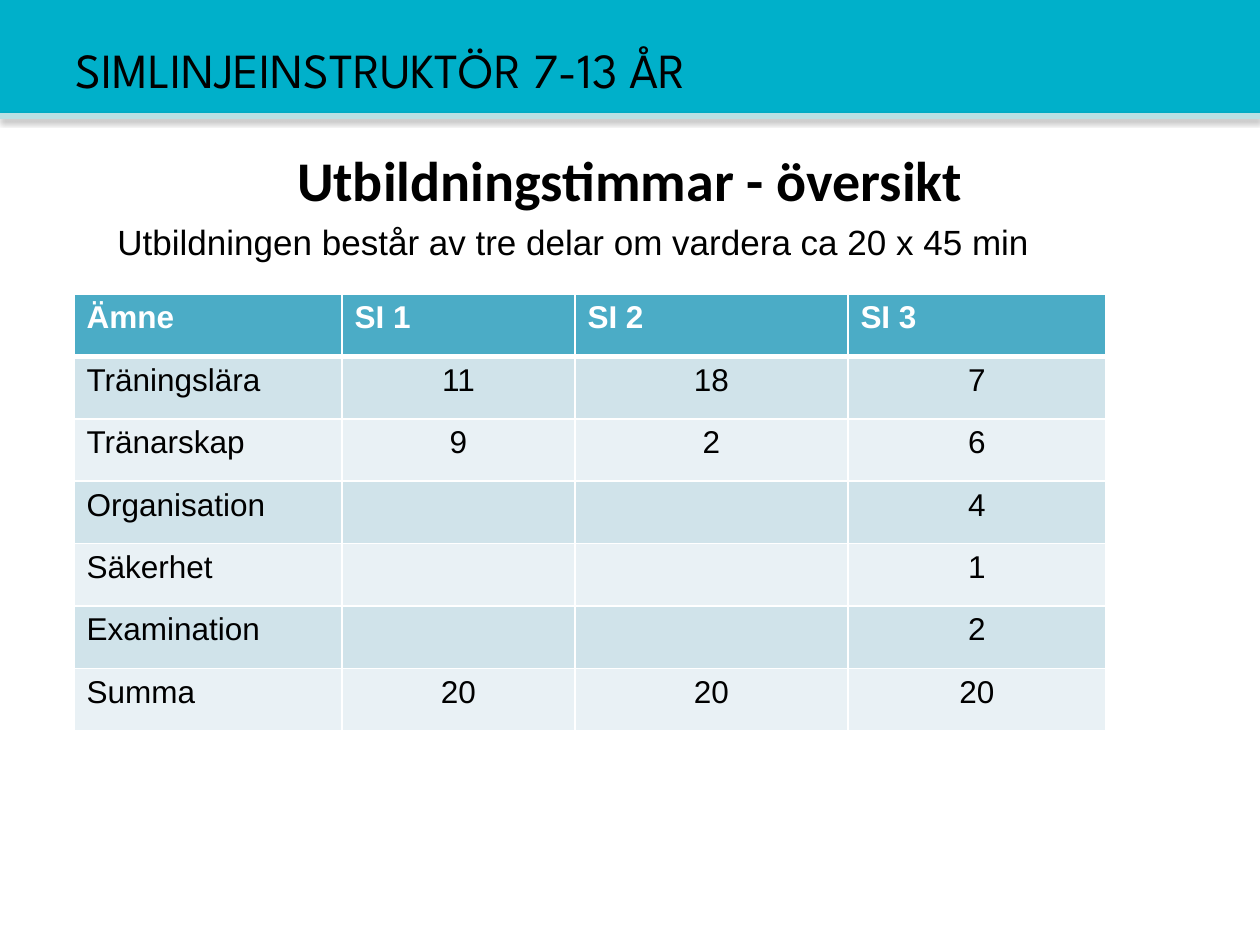
import lxml.etree
import pptx
import pptx.dml.color
import pptx.enum.shapes
import pptx.enum.text
import pptx.oxml.ns
import pptx.util

RGB = pptx.dml.color.RGBColor
ALIGN = pptx.enum.text.PP_ALIGN
ANCHOR = pptx.enum.text.MSO_ANCHOR
qn = pptx.oxml.ns.qn

BLACK = RGB(0x00, 0x00, 0x00)
WHITE = RGB(0xFF, 0xFF, 0xFF)
TURQUOISE = RGB(0x00, 0xB0, 0xCA)
PALE_EDGE = RGB(0xB9, 0xE0, 0xE3)
HEADER_BLUE = RGB(0x4B, 0xAC, 0xC6)
BANDS = RGB(0xD0, 0xE3, 0xEA), RGB(0xE9, 0xF1, 0xF5)


def px(n):
    return pptx.util.Emu(round(n * 914400 / 126))


def sub(parent, tag, **attributes):
    return lxml.etree.SubElement(parent, qn(tag), **attributes)


class Deck:
    """Holds the text style and the current slide."""

    style = dict(name="Arial", size=pptx.util.Pt(18), bold=False)

    def __init__(self, width, height):
        self.prs = pptx.Presentation()
        self.prs.slide_width, self.prs.slide_height = px(width), px(height)
        self.s = self.prs.slides.add_slide(self.prs.slide_layouts[6])

    def add_words(self, tf, text, color=BLACK, align=ALIGN.LEFT, **font):
        p = tf.paragraphs[0]
        p.alignment = align
        r = p.add_run()
        r.text = text
        for key, value in {**self.style, **font}.items():
            setattr(r.font, key, value)
        r.font.color.rgb = color

    def frame(self, tf, **layout):
        for key, value in {"word_wrap": True, **layout}.items():
            setattr(tf, key, value)
        return tf

    def bar(self, x, y, w, h, color, text, layout, **font):
        sp = self.s.shapes.add_shape(pptx.enum.shapes.MSO_SHAPE.RECTANGLE,
                                     px(x), px(y), px(w), px(h))
        sp.shadow.inherit = False
        sp.fill.solid()
        sp.fill.fore_color.rgb = color
        sp.line.fill.background()
        self.add_words(self.frame(sp.text_frame, **layout), text, **font)

    def rule(self, x1, y1, x2, y2, color, width):
        line = self.s.shapes.add_connector(pptx.enum.shapes.MSO_CONNECTOR.STRAIGHT,
                                           px(x1), px(y1), px(x2), px(y2))
        line.line.color.rgb = color
        line.line.width = pptx.util.Pt(width)
        # Soft shadow straight below the line
        effects = sub(line._element.spPr, "a:effectLst")
        shadow = sub(effects, "a:outerShdw", blurRad="40000", dist="23000",
                     dir="5400000", rotWithShape="0")
        sub(sub(shadow, "a:srgbClr", val=str(BLACK)), "a:alpha", val="35000")

    def text(self, x, y, w, h, text, layout, **font):
        sp = self.s.shapes.add_textbox(px(x), px(y), px(w), px(h))
        self.add_words(self.frame(sp.text_frame, **layout), text, **font)

    def borders(self, cell, **widths):
        tcPr = cell._tc.get_or_add_tcPr()
        for side in "LRTB":
            width = pptx.util.Pt(widths.get(side, 1))
            ln = sub(tcPr, f"a:ln{side}", w=str(int(width)))
            sub(sub(ln, "a:solidFill"), "a:srgbClr", val=str(WHITE))

    def table(self, x, y, h, widths, rows):
        table = self.s.shapes.add_table(len(rows), len(widths), px(x), px(y),
                                        px(sum(widths)), px(h)).table
        for column, width in zip(table.columns, widths):
            column.width = px(width)
        for i, row in enumerate(rows):
            header = i == 0
            for j, value in enumerate(row):
                cell = table.cell(i, j)
                self.borders(cell, **({"B": 3} if header else {"T": 3} if i == 1 else {}))
                cell.fill.solid()
                cell.fill.fore_color.rgb = HEADER_BLUE if header else BANDS[(i - 1) % 2]
                if value:
                    self.add_words(cell.text_frame, value, WHITE if header else BLACK,
                                   ALIGN.LEFT if header or j == 0 else ALIGN.CENTER,
                                   bold=header)


def main():
    deck = Deck(1260, 945)

    # Header band
    deck.bar(0, 0, 1260, 116, TURQUOISE, "SIMLINJEINSTRUKTÖR 7-13 ÅR",
             dict(margin_left=px(76), margin_top=px(28), vertical_anchor=ANCHOR.MIDDLE),
             name="League Spartan", size=pptx.util.Pt(28))
    deck.rule(0, 116, 1260, 116, PALE_EDGE, 3)

    # Title
    deck.text(0, 135, 1260, 103, "Utbildningstimmar - översikt",
              dict(margin_top=px(11)), align=ALIGN.CENTER,
              name="Calibri", size=pptx.util.Pt(32), bold=True)

    # Hours per subject
    deck.table(74, 294, 437, [268, 233, 273, 258], [
        ("Ämne", "SI 1", "SI 2", "SI 3"),
        ("Träningslära", "11", "18", "7"),
        ("Tränarskap", "9", "2", "6"),
        ("Organisation", "", "", "4"),
        ("Säkerhet", "", "", "1"),
        ("Examination", "", "", "2"),
        ("Summa", "20", "20", "20"),
    ])

    # Introduction
    deck.text(105, 214, 1042, 55,
              "Utbildningen består av tre delar om vardera ca 20 x 45 min",
              dict(auto_size=pptx.enum.text.MSO_AUTO_SIZE.SHAPE_TO_FIT_TEXT),
              size=pptx.util.Pt(20))

    deck.prs.save("out.pptx")


if __name__ == "__main__":
    main()
